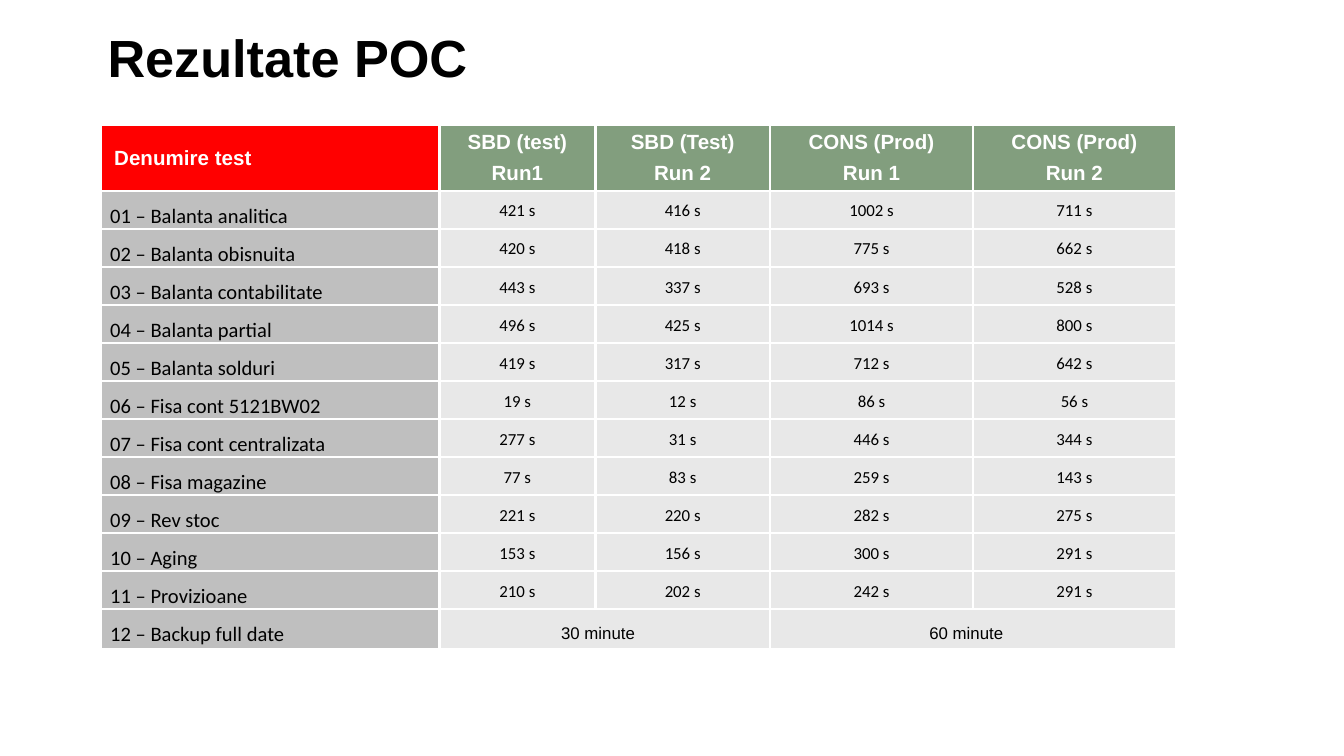
from lxml import etree
from pptx import Presentation, util as u
from pptx.dml.color import RGBColor
from pptx.enum import text as t
from pptx.oxml.ns import qn

WIDE = 10
HIGH = WIDE * 9 / 16
COLS = [2.52, 1.16, 1.3, 1.51, 1.51]
HEAD = ["Denumire test", "SBD (test)\nRun1", "SBD (Test)\nRun 2",
        "CONS (Prod)\nRun 1", "CONS (Prod)\nRun 2"]
TESTS = [
    ("01 – Balanta analitica", 421, 416, 1002, 711),
    ("02 – Balanta obisnuita", 420, 418, 775, 662),
    ("03 – Balanta contabilitate", 443, 337, 693, 528),
    ("04 – Balanta partial", 496, 425, 1014, 800),
    ("05 – Balanta solduri", 419, 317, 712, 642),
    ("06 – Fisa cont 5121BW02", 19, 12, 86, 56),
    ("07 – Fisa cont centralizata", 277, 31, 446, 344),
    ("08 – Fisa magazine", 77, 83, 259, 143),
    ("09 – Rev stoc", 221, 220, 282, 275),
    ("10 – Aging", 153, 156, 300, 291),
    ("11 – Provizioane", 210, 202, 242, 291),
]
LAST = "12 – Backup full date"
TIMES = {1: "30 minute", 3: "60 minute"}
ROWS = [0.49] + [0.26] * len(TESTS) + [0.3]
MID = t.MSO_ANCHOR.MIDDLE
TOP = t.MSO_ANCHOR.TOP


def color(code):
    return RGBColor.from_string(code)


def add_run(para, words, size, face="Arial", ink="000000", bold=False):
    run = para.add_run()
    run.text = words
    font = run.font
    font.size, font.name, font.bold = u.Pt(size), face, bold
    font.color.rgb = color(ink)


def add_title(slide, words):
    box = slide.shapes.title
    box.left, box.top = u.Inches(0.08 * WIDE), u.Inches(0.19)
    box.width, box.height = u.Inches(8.69), u.Inches(0.68)
    frame = box.text_frame
    frame.margin_left = frame.margin_right = 0
    frame.margin_top = frame.margin_bottom = 0
    frame.vertical_anchor = TOP
    para = frame.paragraphs[0]
    para.alignment = t.PP_ALIGN.LEFT
    add_run(para, words, 28, bold=True)


def set_edges(cell):
    props = cell._tc.get_or_add_tcPr()
    for side in "LRTB":
        line = etree.SubElement(props, qn(f"a:ln{side}"), w=str(u.Pt(1.5)))
        fill = etree.SubElement(line, qn("a:solidFill"))
        etree.SubElement(fill, qn("a:srgbClr"), val="FFFFFF")


def set_cell(cell, fill, pads, anchor):
    set_edges(cell)
    cell.fill.solid()
    cell.fill.fore_color.rgb = color(fill)
    cell.vertical_anchor = anchor
    left, top, right, low = map(u.Inches, pads)
    cell.margin_left, cell.margin_top = left, top
    cell.margin_right, cell.margin_bottom = right, low


def add_head(cell, words, first):
    set_cell(cell, "FF0000" if first else "829E7E", (0.1, 0.04, 0.1, 0.04), MID)
    frame = cell.text_frame
    for i, line in enumerate(words.split("\n")):
        para = frame.add_paragraph() if i else frame.paragraphs[0]
        para.alignment = t.PP_ALIGN.LEFT if first else t.PP_ALIGN.CENTER
        if i:
            para.space_before = u.Pt(4)
        add_run(para, line, 11, ink="FFFFFF", bold=True)


def add_body(cell, words, size, fill, face="Calibri",
             pads=(0.07, 0, 0.07, 0), anchor=TOP, align=t.PP_ALIGN.CENTER):
    set_cell(cell, fill, pads, anchor)
    para = cell.text_frame.paragraphs[0]
    para.alignment, para.line_spacing = align, 1.5
    para.space_after = u.Pt(6)
    add_run(para, words, size, face)


def add_label(cell, words):
    add_body(cell, words, 11, "BFBFBF", align=t.PP_ALIGN.LEFT)


def add_grid(slide):
    frame = slide.shapes.add_table(
        len(ROWS), len(COLS), u.Inches(0.075 * WIDE), u.Inches(0.93),
        u.Inches(sum(COLS)), u.Inches(sum(ROWS)))
    table = frame.table
    for col, width in zip(table.columns, COLS):
        col.width = u.Inches(width)
    for row, height in zip(table.rows, ROWS):
        row.height = u.Inches(height)
    for c, words in enumerate(HEAD):
        add_head(table.cell(0, c), words, c == 0)
    for r, (name, *times) in enumerate(TESTS, 1):
        add_label(table.cell(r, 0), name)
        for c, time in enumerate(times, 1):
            add_body(table.cell(r, c), f"{time} s", 9, "E8E8E8")
    end = len(ROWS) - 1
    add_label(table.cell(end, 0), LAST)
    for c, words in TIMES.items():
        cell = table.cell(end, c)
        cell.merge(table.cell(end, c + 1))
        add_body(cell, words, 9, "E8E8E8", "Arial", (0.1, 0.04, 0.2, 0.04), MID)


def main():
    deck = Presentation()
    deck.slide_width, deck.slide_height = u.Inches(WIDE), u.Inches(HIGH)
    slide = deck.slides.add_slide(deck.slide_layouts[5])
    add_title(slide, "Rezultate POC")
    add_grid(slide)
    deck.save("out.pptx")


if __name__ == "__main__":
    main()
